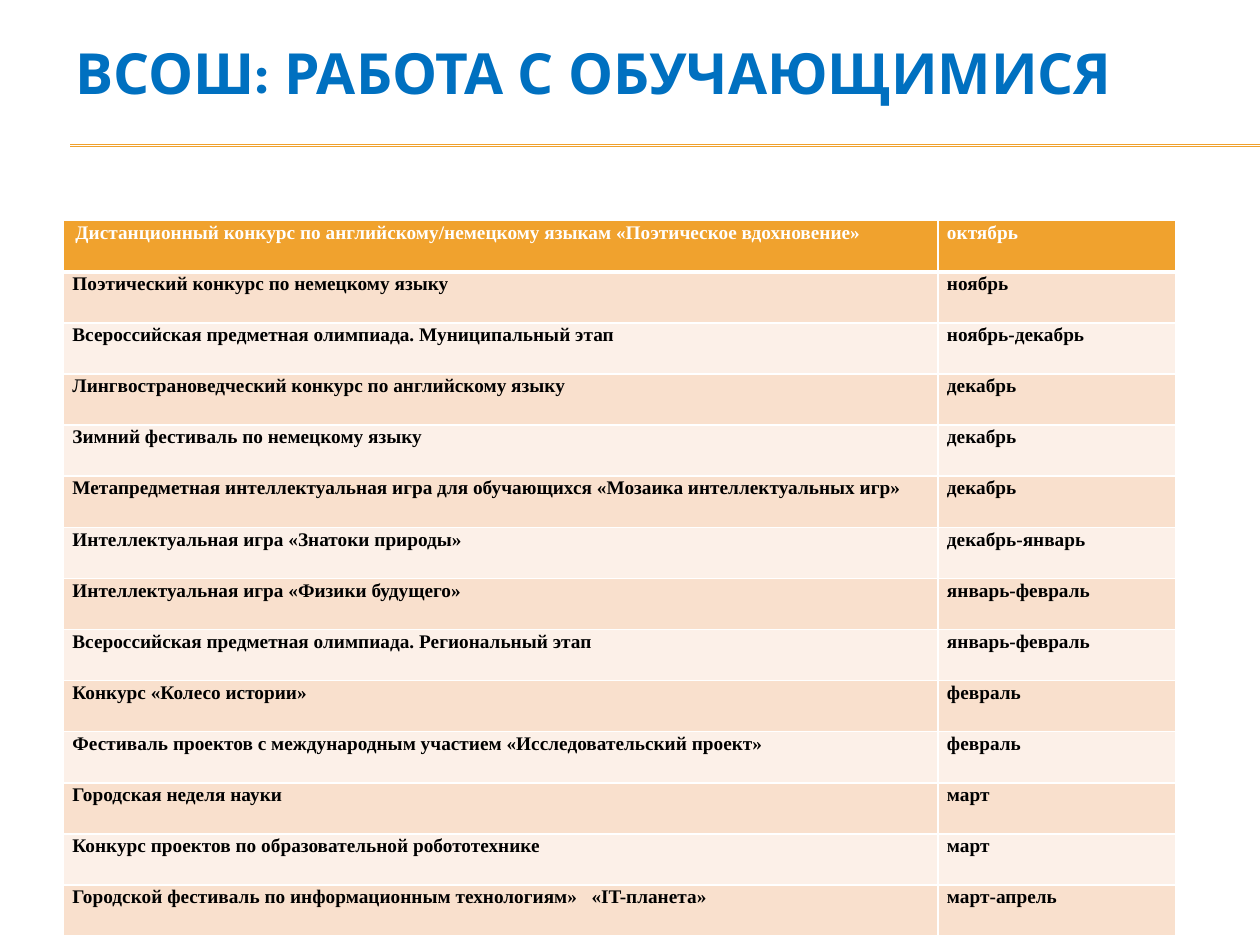
from typing import NamedTuple

from lxml import etree
from pptx import Presentation
from pptx.dml.color import RGBColor
from pptx.enum.shapes import MSO_CONNECTOR
from pptx.enum.text import MSO_ANCHOR, PP_ALIGN
from pptx.oxml.ns import qn
from pptx.util import Cm, Pt

STRAIGHT = MSO_CONNECTOR.STRAIGHT
MIDDLE = MSO_ANCHOR.MIDDLE
LEFT, JUSTIFY = PP_ALIGN.LEFT, PP_ALIGN.JUSTIFY

ORANGE, BLUE, WHITE, BLACK = "F0A22E", "0070C0", "FFFFFF", "000000"
BANDS = ("F9E0CD", "FCF0E8")
COLUMN_WIDTHS = (17.63, 4.8)
ROW_HEIGHT = 1.03


class Event(NamedTuple):
    name: str
    month: str
    align: PP_ALIGN = JUSTIFY


EVENTS = [
    Event("Дистанционный конкурс по английскому/немецкому языкам «Поэтическое вдохновение»",
          "октябрь", LEFT),
    Event("Поэтический конкурс по немецкому языку", "ноябрь", LEFT),
    Event("Всероссийская предметная олимпиада. Муниципальный этап", "ноябрь-декабрь"),
    Event("Лингвострановедческий конкурс по английскому языку", "декабрь"),
    Event("Зимний фестиваль по немецкому языку", "декабрь"),
    Event("Метапредметная интеллектуальная игра для обучающихся «Мозаика интеллектуальных игр»",
          "декабрь"),
    Event("Интеллектуальная игра «Знатоки природы»", "декабрь-январь", LEFT),
    Event("Интеллектуальная игра «Физики будущего»", "январь-февраль"),
    Event("Всероссийская предметная олимпиада. Региональный этап", "январь-февраль"),
    Event("Конкурс «Колесо истории»", "февраль"),
    Event("Фестиваль проектов с международным участием «Исследовательский проект»", "февраль"),
    Event("Городская неделя науки", "март"),
    Event("Конкурс проектов по образовательной робототехнике", "март"),
    Event("Городской фестиваль по информационным технологиям»   «IT-планета»", "март-апрель"),
]


def rgb(value: str) -> RGBColor:
    return RGBColor.from_string(value)


def write(frame, text: str, *, font: str, size: float, color: str,
          align: PP_ALIGN = LEFT, spacing: float = 1.0) -> None:
    paragraph = frame.paragraphs[0]
    paragraph.alignment = align
    paragraph.line_spacing = spacing
    run = paragraph.add_run()
    run.text = text
    run.font.name = font
    run.font.size = Pt(size)
    run.font.bold = True
    run.font.color.rgb = rgb(color)


def add_rule(slide, y: float) -> None:
    """Draw a thin orange line from the left margin to the slide's right edge."""
    rule = slide.shapes.add_connector(STRAIGHT, Cm(1.42), Cm(y), Cm(25.4), Cm(y))
    rule.line.color.rgb = rgb(ORANGE)
    rule.line.width = Pt(0.75)
    etree.SubElement(rule._element.spPr, qn("a:effectLst"))


def set_borders(cell, top: float, bottom: float) -> None:
    """Give the cell white borders; the schema wants them ahead of the fill."""
    properties = cell._tc.get_or_add_tcPr()
    widths = {"a:lnL": 1, "a:lnR": 1, "a:lnT": top, "a:lnB": bottom}
    for index, (tag, width) in enumerate(widths.items()):
        border = etree.Element(qn(tag), w=str(Pt(width)))
        fill = etree.SubElement(border, qn("a:solidFill"))
        etree.SubElement(fill, qn("a:srgbClr"), val=WHITE)
        properties.insert(index, border)


def fill_cell(cell, text: str, row: int, align: PP_ALIGN) -> None:
    header = row == 0
    cell.margin_left = cell.margin_right = Cm(0.18)
    cell.margin_top = cell.margin_bottom = 0
    cell.fill.solid()
    cell.fill.fore_color.rgb = rgb(ORANGE if header else BANDS[(row - 1) % 2])
    set_borders(cell, top=3 if row == 1 else 1, bottom=3 if header else 1)
    write(cell.text_frame, text, font="Times New Roman", size=11,
          color=WHITE if header else BLACK, align=align, spacing=1.07)


def add_schedule(slide, events: list[Event]) -> None:
    schedule = slide.shapes.add_table(
        len(events), len(COLUMN_WIDTHS), Cm(1.28), Cm(4.45),
        Cm(sum(COLUMN_WIDTHS)), Cm(ROW_HEIGHT * len(events))).table
    schedule.horz_banding = False
    for column, width in zip(schedule.columns, COLUMN_WIDTHS):
        column.width = Cm(width)
    for row, event in enumerate(events):
        schedule.rows[row].height = Cm(ROW_HEIGHT)
        fill_cell(schedule.cell(row, 0), event.name, row, event.align)
        fill_cell(schedule.cell(row, 1), event.month, row, LEFT)
    first_name = schedule.cell(0, 0).text_frame.paragraphs[0]
    first_name._p.get_or_add_pPr().set("marL", str(Cm(0.06)))


def main() -> None:
    presentation = Presentation()
    presentation.slide_width, presentation.slide_height = Cm(25.4), Cm(19.05)
    slide = presentation.slides.add_slide(presentation.slide_layouts[6])

    for y in (2.92, 2.95):
        add_rule(slide, y)

    title = slide.shapes.add_textbox(Cm(1.27), Cm(0.76), Cm(22.86), Cm(1.37)).text_frame
    title.word_wrap = True
    title.vertical_anchor = MIDDLE
    write(title, "ВСОШ: РАБОТА С ОБУЧАЮЩИМИСЯ", font="Karla", size=32.4, color=BLUE)

    add_schedule(slide, EVENTS)
    presentation.save("out.pptx")


if __name__ == "__main__":
    main()
